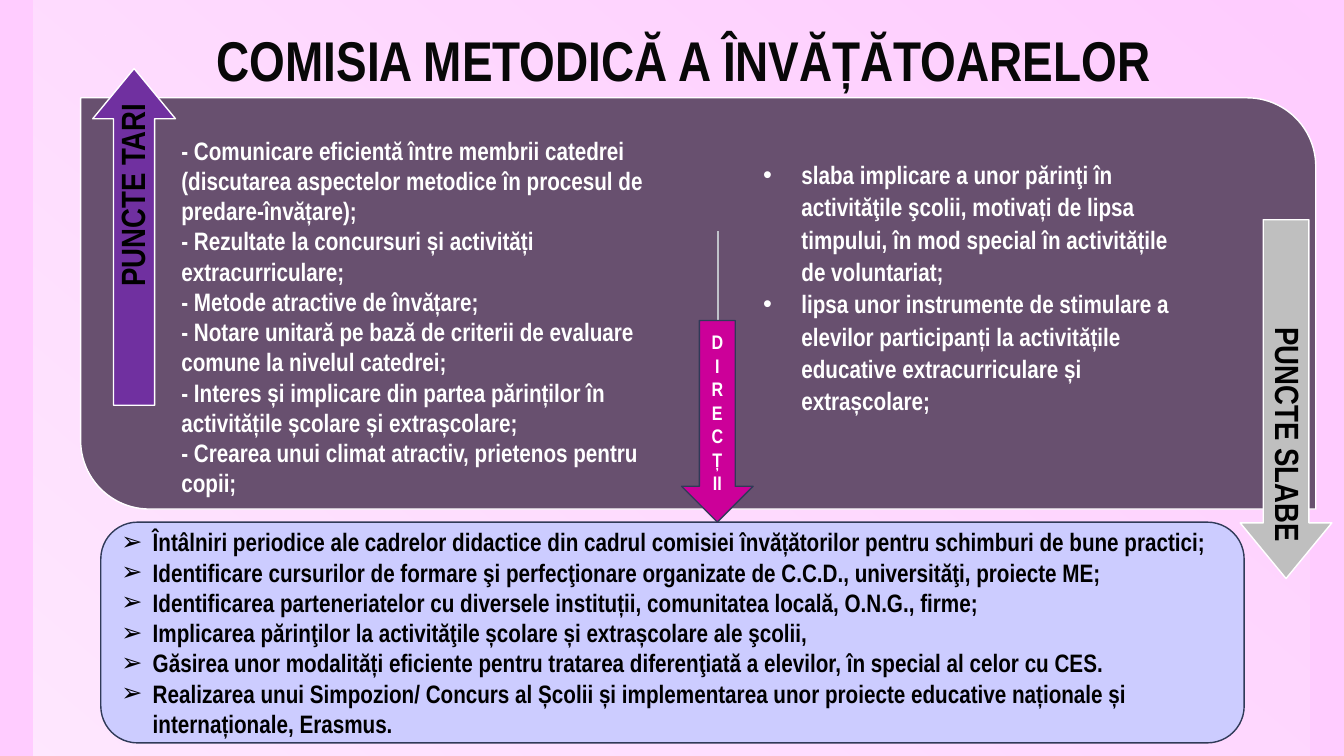
from lxml.etree import SubElement
from pptx import Presentation
from pptx.dml.color import RGBColor
from pptx.enum.shapes import MSO_CONNECTOR, MSO_SHAPE
from pptx.enum.text import MSO_ANCHOR, PP_ALIGN
from pptx.oxml.ns import qn
from pptx.util import Inches, Pt

FONT = "Arial Narrow"
STRONG = [
    "- Comunicare eficientă între membrii catedrei (discutarea aspectelor "
    "metodice în procesul de predare-învățare);",
    "- Rezultate la concursuri și activități extracurriculare;",
    "- Metode atractive de învățare;",
    "- Notare unitară pe bază de criterii de evaluare comune la nivelul catedrei;",
    "- Interes și implicare din partea părinților în activitățile școlare și extrașcolare;",
    "- Crearea unui climat atractiv, prietenos pentru copii;",
]
WEAK = [
    "slaba implicare a unor părinţi în activităţile şcolii, motivați de lipsa "
    "timpului, în mod special în activitățile de voluntariat;",
    "lipsa unor instrumente de stimulare a elevilor participanți la activitățile "
    "educative extracurriculare și extrașcolare;",
]
GOALS = [
    "Întâlniri periodice ale cadrelor didactice din cadrul comisiei învățătorilor "
    "pentru schimburi de bune practici;",
    "Identificare cursurilor de formare şi perfecţionare organizate de C.C.D., "
    "universităţi, proiecte ME;",
    "Identificarea parteneriatelor cu diversele instituții, comunitatea locală, O.N.G., firme;",
    "Implicarea părinţilor la activităţile școlare și extrașcolare ale şcolii,",
    "Găsirea unor modalități eficiente pentru tratarea diferenţiată a elevilor, "
    "în special al celor cu CES.",
    "Realizarea unui Simpozion/ Concurs al Școlii și implementarea unor proiecte "
    "educative naționale și internaționale, Erasmus.",
]


def color(code):
    return RGBColor.from_string(code)


def write(shape, lines, size=18, ink="FFFFFF", align=PP_ALIGN.LEFT,
          anchor=MSO_ANCHOR.TOP, space=None, after=0, bullet=None, indent=0):
    frame = shape.text_frame
    frame.word_wrap = True
    frame.vertical_anchor = anchor
    for i, line in enumerate(lines):
        para = frame.paragraphs[0] if i == 0 else frame.add_paragraph()
        para.alignment = align
        if space:
            para.line_spacing = space
        if after and i:
            para.space_after = Pt(after)
        if bullet:
            props = para._p.get_or_add_pPr()
            props.set("marL", str(Inches(indent)))
            props.set("indent", str(-Inches(indent)))
            SubElement(props, qn("a:buFont"), typeface="Arial")
            SubElement(props, qn("a:buChar"), char=bullet)
        run = para.add_run()
        run.text = line
        run.font.name, run.font.size, run.font.bold = FONT, Pt(size), True
        run.font.color.rgb = color(ink)
    return frame


def add_text(slide, box, lines, inset=None, turn=0, **style):
    shape = slide.shapes.add_textbox(*map(Inches, box))
    shape.rotation = turn
    frame = write(shape, lines, **style)
    if inset:
        frame.margin_left = frame.margin_right = Inches(inset[0])
        frame.margin_top = frame.margin_bottom = Inches(inset[1])


def add_form(slide, kind, box, fill=None, line=None, adjust=(), turn=0):
    shape = slide.shapes.add_shape(kind, *map(Inches, box))
    shape.shadow.inherit = False
    shape.rotation = turn
    for i, value in enumerate(adjust):
        shape.adjustments[i] = value
    if fill:
        shape.fill.solid()
        shape.fill.fore_color.rgb = color(fill)
    if line:
        shape.line.color.rgb = color(line)
        shape.line.width = Pt(1)
    else:
        shape.line.fill.background()
    return shape


def backdrop(slide, box):
    slide.background.fill.solid()
    slide.background.fill.fore_color.rgb = color("FFCCFF")
    veil = add_form(slide, MSO_SHAPE.RECTANGLE, box)
    veil.fill.gradient()
    veil.fill.gradient_angle = 230
    for stop in veil.fill.gradient_stops:
        stop.color.rgb = color("FFFFFF")
    # White fades in from the top right to the bottom left
    tints = veil._element.spPr.iter(qn("a:srgbClr"))
    for tint, alpha in zip(list(tints), (0, 55000)):
        SubElement(tint, qn("a:alpha"), val=str(alpha))


def panel(slide, box):
    x, y, w, h = box
    add_form(slide, MSO_SHAPE.ROUND_2_DIAG_RECTANGLE, box, "68506F", "FFFFFF", (0, 0.167))
    # Divider between the two columns
    mid = Inches(x + 6.32)
    rule = slide.shapes.add_connector(
        MSO_CONNECTOR.STRAIGHT, mid, Inches(y + 1.32), mid, Inches(y + 4.8))
    rule.line.color.rgb = color("C0C2CA")
    rule.line.width = Pt(1)
    SubElement(rule._element.spPr, qn("a:effectLst"))
    # Strong and weak points
    add_text(slide, (x + 0.9, y + 0.32, 5.28, 3.74), STRONG)
    add_text(slide, (x + 6.67, y + 0.54, 4.41, 2.67), WEAK,
             space=1.07, after=7.5, bullet="•", indent=0.38)


def banner(slide, box, label, fill, turn):
    x, y, w, h = box
    mid, half = x + w / 2, y + h / 2
    add_form(slide, MSO_SHAPE.RIGHT_ARROW, (mid - h / 2, half - w / 2, h, w),
             fill, "FFFFFF", (0.498, 0.607), turn)
    # Label sits on the shaft, shifted towards the tail
    long, wide = 0.925 * h, w / 2
    half += 0.0375 * h * (1 if turn == 270 else -1)
    add_text(slide, (mid - long / 2, half - wide / 2, long, wide), [label],
             inset=(0.1, 0.1), turn=turn, size=24, ink="000000",
             align=PP_ALIGN.RIGHT, anchor=MSO_ANCHOR.MIDDLE, space=0.9)


def goals(slide, box):
    card = add_form(slide, MSO_SHAPE.ROUNDED_RECTANGLE, box, "CCCCFF", "303A58")
    write(card, GOALS, ink="000000", anchor=MSO_ANCHOR.MIDDLE, bullet="➢", indent=0.31)


def pointer(slide, box):
    arrow = add_form(slide, MSO_SHAPE.DOWN_ARROW, box, "CC0099", "303A58")
    write(arrow, ["DIRECȚ", "II"], size=14, align=PP_ALIGN.CENTER, anchor=MSO_ANCHOR.MIDDLE)


def main():
    deck = Presentation()
    deck.slide_width, deck.slide_height = Inches(13.33), Inches(7.5)
    slide = deck.slides.add_slide(deck.slide_layouts[6])
    backdrop(slide, (0.33, 0, 12.66, 7.5))
    add_text(slide, (2.02, 0, 12.44, 0.99), ["COMISIA METODICĂ A ÎNVĂȚĂTOARELOR"],
             inset=(0.13, 0.07), size=40, ink="080808",
             anchor=MSO_ANCHOR.BOTTOM, space=0.85)
    panel(slide, (0.8, 0.97, 12.25, 4.08))
    banner(slide, (0.92, 0.68, 0.82, 3.34), "PUNCTE TARI", "7030A0", 270)
    banner(slide, (12.3, 2.18, 0.91, 3.56), "PUNCTE SLABE", "BFBFBF", 90)
    goals(slide, (1, 5.18, 11.34, 2.19))
    pointer(slide, (6.76, 3.18, 0.71, 2))
    deck.save("out.pptx")


if __name__ == "__main__":
    main()
